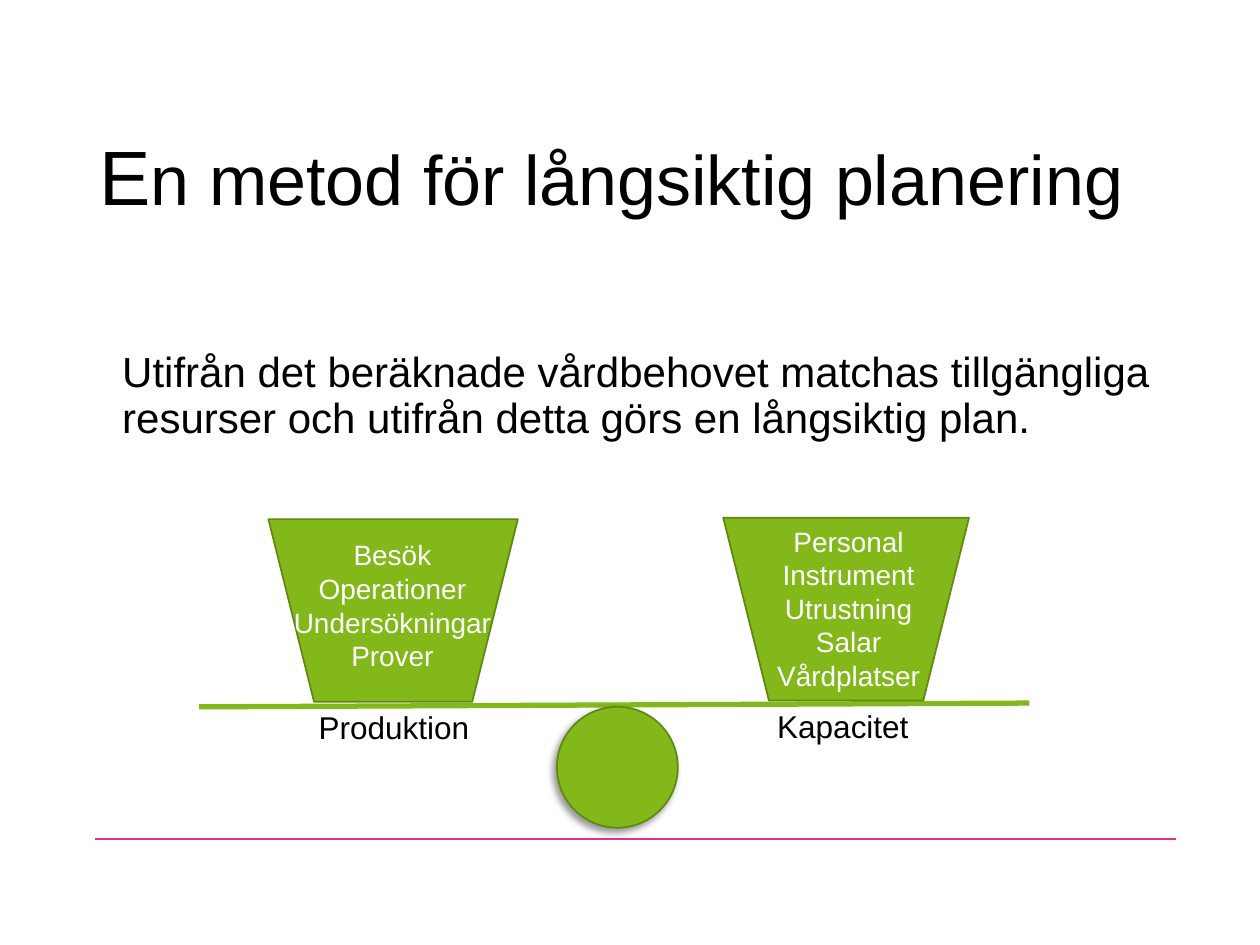
from lxml import etree
from pptx import Presentation
from pptx.dml.color import RGBColor
from pptx.enum.shapes import MSO_CONNECTOR, MSO_SHAPE
from pptx.enum.text import MSO_ANCHOR, MSO_AUTO_SIZE, PP_ALIGN
from pptx.oxml import parse_xml
from pptx.oxml.ns import nsdecls, qn
from pptx.util import Inches, Pt

BLACK = RGBColor(0x00, 0x00, 0x00)
WHITE = RGBColor(0xFF, 0xFF, 0xFF)
GREEN = RGBColor(0x83, 0xB8, 0x1A)
DARK_GREEN = RGBColor(0x61, 0x88, 0x13)
PINK = RGBColor(0xE1, 0x32, 0x88)


def place(shape, left, top, width, height):
    frame = {"left": left, "top": top, "width": width, "height": height}
    for name, value in frame.items():
        setattr(shape, name, Inches(value))


def format_text(shape, size, color, align=PP_ALIGN.LEFT, spacing=None):
    for para in shape.text_frame.paragraphs:
        para.alignment = align
        para.line_spacing = spacing
        para.space_before = Pt(0)
        for span in para.runs:
            for name, value in {"name": "Arial", "size": Pt(size)}.items():
                setattr(span.font, name, value)
            span.font.color.rgb = color


deck = Presentation()
deck.slide_width, deck.slide_height = Inches(10), Inches(7.5)
page = deck.slides.add_slide(deck.slide_layouts[1])
shapes = page.shapes

title, body = shapes.title, page.placeholders[1]
place(title, 0.69, 0.71, 8.62, 1.45)
place(body, 0.87, 2.74, 8.62, 1.17)
for holder, anchor in ((title, MSO_ANCHOR.MIDDLE), (body, MSO_ANCHOR.TOP)):
    settings = {"auto_size": MSO_AUTO_SIZE.NONE, "word_wrap": True, "vertical_anchor": anchor}
    for name, value in settings.items():
        setattr(holder.text_frame, name, value)

heading = title.text_frame.paragraphs[0]
for text in ("E", "n metod för långsiktig planering"):
    heading.add_run().text = text
format_text(title, 40, BLACK, spacing=0.9)
heading.runs[0].font.size = Pt(44)

body.text_frame.text = (
    "Utifrån det beräknade vårdbehovet matchas tillgängliga "
    "resurser och utifrån detta görs en långsiktig plan."
)
properties = body.text_frame.paragraphs[0]._p.get_or_add_pPr()
for name in ("marL", "indent"):
    properties.set(name, "0")
etree.SubElement(properties, qn("a:buNone"))
format_text(body, 24, BLACK, spacing=0.9)

lines = (
    (0.75, 6.66, 9.33, 6.66, PINK, 1.5),
    (1.58, 5.61, 8.17, 5.58, GREEN, 3),
)
for x1, y1, x2, y2, color, weight in lines:
    line = shapes.add_connector(
        MSO_CONNECTOR.STRAIGHT, Inches(x1), Inches(y1), Inches(x2), Inches(y2)
    )
    line.line.color.rgb = color
    line.line.width = Pt(weight)
    etree.SubElement(line._element.spPr, qn("a:effectLst"))

solids = (
    (MSO_SHAPE.OVAL, 4.42, 5.61, 0.96, 0.96, 0),
    (MSO_SHAPE.TRAPEZOID, 2.13, 4.12, 1.98, 1.45, 180),
    (MSO_SHAPE.TRAPEZOID, 5.74, 4.11, 1.95, 1.45, 180),
)
for kind, left, top, width, height, rotation in solids:
    solid = shapes.add_shape(kind, Inches(left), Inches(top), Inches(width), Inches(height))
    solid.rotation = rotation
    solid.fill.solid()
    solid.fill.fore_color.rgb = GREEN
    solid.line.color.rgb = DARK_GREEN
    solid.line.width = Pt(1)
    solid.shadow.inherit = False
    if kind == MSO_SHAPE.OVAL:
        solid._element.spPr.find(qn("a:effectLst")).append(parse_xml(
            f'<a:outerShdw {nsdecls("a")} blurRad="{Pt(4)}" dist="{Pt(3)}" dir="8100000" '
            'algn="tr" rotWithShape="0"><a:srgbClr val="000000">'
            '<a:alpha val="40000"/></a:srgbClr></a:outerShdw>'
        ))

labels = (
    ("Produktion", 2.43, 5.57, 1.41, 0.4, 18, BLACK, PP_ALIGN.LEFT),
    ("Kapacitet", 6.07, 5.56, 1.25, 0.4, 18, BLACK, PP_ALIGN.LEFT),
    ("Personal\nInstrument\vUtrustning\nSalar\nVårdplatser",
     5.2, 4.11, 3.07, 1.45, 16, WHITE, PP_ALIGN.CENTER),
    ("Besök\nOperationer\nUndersökningar\nProver",
     1.58, 4.22, 3.07, 1.18, 16, WHITE, PP_ALIGN.CENTER),
)
for text, left, top, width, height, size, color, align in labels:
    box = shapes.add_textbox(Inches(left), Inches(top), Inches(width), Inches(height))
    box.text_frame.text = text
    box.text_frame.word_wrap = align == PP_ALIGN.CENTER
    box.text_frame.auto_size = MSO_AUTO_SIZE.SHAPE_TO_FIT_TEXT
    format_text(box, size, color, align)

deck.save("out.pptx")
